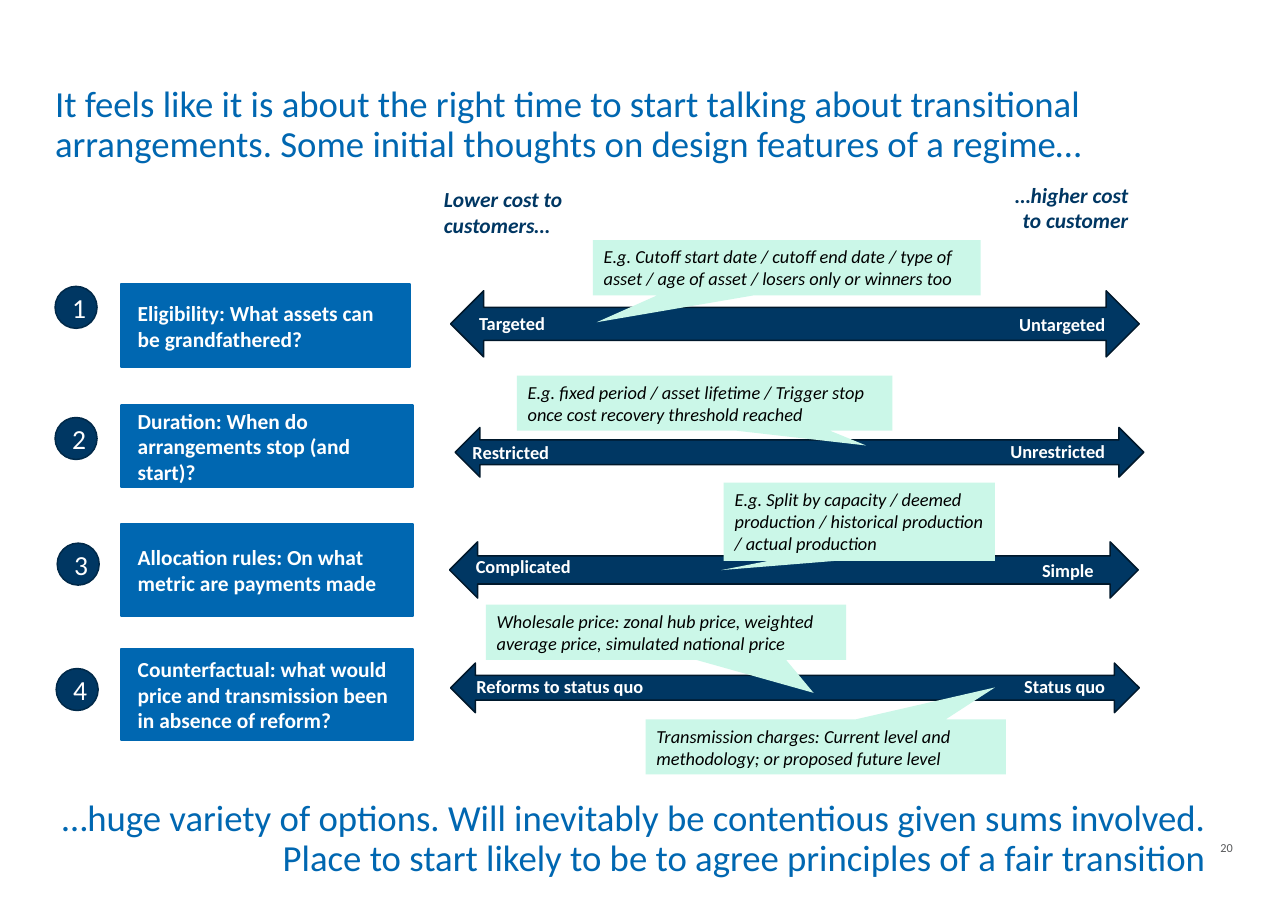
from pptx import Presentation
from pptx.dml.color import RGBColor
from pptx.enum.shapes import MSO_SHAPE
from pptx.enum.text import MSO_ANCHOR, MSO_AUTO_SIZE, PP_ALIGN
from pptx.util import Pt

LEFT, CENTER, RIGHT = PP_ALIGN.LEFT, PP_ALIGN.CENTER, PP_ALIGN.RIGHT
TOP, MIDDLE, BOTTOM = MSO_ANCHOR.TOP, MSO_ANCHOR.MIDDLE, MSO_ANCHOR.BOTTOM
NO_FIT = MSO_AUTO_SIZE.NONE
RECT, OVAL = MSO_SHAPE.RECTANGLE, MSO_SHAPE.OVAL
ARROW, CALLOUT = MSO_SHAPE.LEFT_RIGHT_ARROW, MSO_SHAPE.RECTANGULAR_CALLOUT

FONT = "Calibri"
COLORS = {
    "blue": "0067B1",
    "navy": "003763",
    "circle_line": "002949",
    "arrow_line": "00182B",
    "mint": "CBF7E8",
    "white": "FFFFFF",
    "black": "000000",
    "gray": "58595B",
}

ROWS = [
    dict(question="Eligibility: What assets can be grandfathered?",
         circle=(36, 187.2), box=(79.2, 185.8, 188.6, 54), arrow=(294.5, 190.1, 43.2),
         labels=[("Targeted", 306, 200.2, 95.8, LEFT), ("Untargeted", 582.5, 200.9, 146.9, RIGHT)]),
    dict(question="Duration: When do arrangements stop (and start)?",
         circle=(36, 272.9), box=(79.2, 265, 190.8, 53.3), arrow=(297.4, 279.4, 32.4),
         labels=[("Restricted", 301.7, 285.1, 95.8, LEFT), ("Unrestricted", 582.5, 284.4, 146.9, RIGHT)]),
    dict(question="Allocation rules: On what metric are payments made",
         circle=(37.4, 355), box=(79.2, 342.7, 190.8, 59.8), arrow=(293.8, 354.2, 36.7),
         labels=[("Complicated", 233.3, 359.3, 146.9, RIGHT), ("Simple", 673.9, 362.2, 95.8, LEFT)]),
    dict(question="Counterfactual: what would price and transmission been in absence of reform?",
         circle=(36.7, 437), box=(79.2, 424.1, 190.8, 59.8), arrow=(294.5, 433.4, 32.4),
         labels=[("Reforms to status quo", 280.8, 437.8, 146.9, RIGHT),
                 ("Status quo", 582.5, 437.8, 146.9, RIGHT)]),
]

CALLOUTS = [
    ("E.g. Cutoff start date / cutoff end date / type of asset / age of asset / losers only or winners too",
     (387.4, 157, 253.4, 36), (-0.49, 0.99)),
    ("E.g. fixed period / asset lifetime / Trigger stop once cost recovery threshold reached",
     (337.7, 245.5, 245.5, 36), (0.43, 0.77)),
    ("E.g. Split by capacity / deemed production / historical production / actual production",
     (473, 315.4, 177.1, 51.1), (-0.51, 0.62)),
    ("Wholesale price: zonal hub price, weighted average price, simulated national price",
     (317.5, 395.3, 235.4, 36), (0.41, 1.1)),
    ("Transmission charges: Current level and methodology; or proposed future level",
     (421.9, 470.2, 235.4, 36), (0.47, -1.08)),
]


def rgb(name):
    return RGBColor.from_string(COLORS[name])


def write_text(sp, text, size=12, color="white", bold=False, italic=False,
               align=LEFT, anchor=TOP, inset=(7.2, 3.6), spacing=None):
    tf = sp.text_frame
    tf.word_wrap = True
    tf.auto_size = NO_FIT
    tf.vertical_anchor = anchor
    tf.margin_left = tf.margin_right = Pt(inset[0])
    tf.margin_top = tf.margin_bottom = Pt(inset[1])
    p = tf.paragraphs[0]
    p.alignment = align
    if spacing:
        p.line_spacing = spacing
    r = p.add_run()
    r.text = text
    r.font.name = FONT
    r.font.size = Pt(size)
    r.font.bold = bold
    r.font.italic = italic
    r.font.color.rgb = rgb(color)


class SlideBuilder:
    headline = dict(size=24, color="blue", anchor=BOTTOM, inset=(0, 0), spacing=0.9)

    def __init__(self, prs):
        self.slide = prs.slides.add_slide(prs.slide_layouts[5])

    def title(self, text, box):
        sp = self.slide.shapes.title
        sp.left, sp.top, sp.width, sp.height = map(Pt, box)
        write_text(sp, text, **self.headline)

    def text(self, text, box, **style):
        write_text(self.slide.shapes.add_textbox(*map(Pt, box)), text, **style)

    def shape(self, kind, box, fill, line=None, weight=1):
        sp = self.slide.shapes.add_shape(kind, *map(Pt, box))
        sp.shadow.inherit = False
        sp.fill.solid()
        sp.fill.fore_color.rgb = rgb(fill)
        if line:
            sp.line.color.rgb = rgb(line)
            sp.line.width = Pt(weight)
        else:
            sp.line.fill.background()
        return sp

    def number(self, value, left, top):
        sp = self.shape(OVAL, (left, top, 27.4, 27.4), "navy", "circle_line")
        write_text(sp, str(value), size=18, align=CENTER, anchor=MIDDLE)

    def question(self, text, box):
        sp = self.shape(RECT, box, "blue", "blue", 1.5)
        write_text(sp, text, size=14, bold=True, anchor=MIDDLE, inset=(10.8, 10.8))

    def arrow(self, left, top, height):
        self.shape(ARROW, (left, top, 450, height), "navy", "arrow_line")

    def callout(self, text, box, tip):
        sp = self.shape(CALLOUT, box, "mint")
        sp.adjustments[0], sp.adjustments[1] = tip
        write_text(sp, text, color="black", italic=True)


def main():
    prs = Presentation()
    prs.slide_width, prs.slide_height = Pt(841.68), Pt(595.44)
    s = SlideBuilder(prs)

    s.title("It feels like it is about the right time to start talking about transitional "
            "arrangements. Some initial thoughts on design features of a regime…",
            (36, 54, 769.7, 54))
    heading = dict(size=14, color="navy", bold=True, italic=True)
    s.text("Lower cost to customers…", (283, 118.1, 131, 41), **heading)
    s.text("…higher cost to customer", (648.7, 115.2, 95.8, 41), align=RIGHT, **heading)

    for value, row in enumerate(ROWS, 1):
        s.number(value, *row["circle"])
        s.question(row["question"], row["box"])
        s.arrow(*row["arrow"])
        for label, left, top, width, align in row["labels"]:
            s.text(label, (left, top, width, 21.6), bold=True, align=align)

    for callout in CALLOUTS:
        s.callout(*callout)

    s.text("…huge variety of options. Will inevitably be contentious given sums involved. "
           "Place to start likely to be to agree principles of a fair transition",
           (25.2, 520.6, 762.5, 54), align=RIGHT, **s.headline)
    s.text("20", (769.7, 532.1, 36, 26.6), size=8, color="gray",
           align=RIGHT, anchor=BOTTOM, inset=(0, 0))
    prs.save("out.pptx")


if __name__ == "__main__":
    main()
